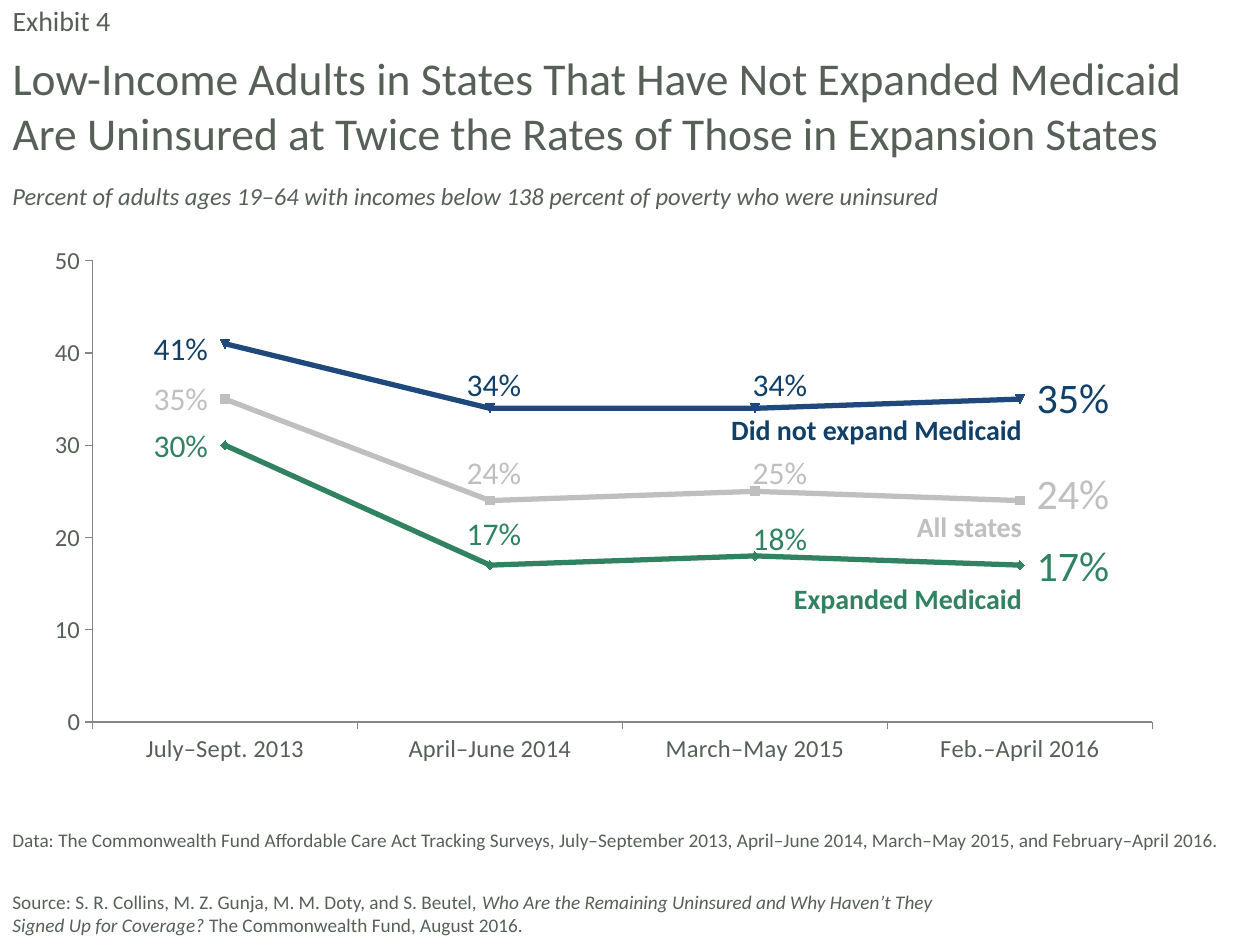
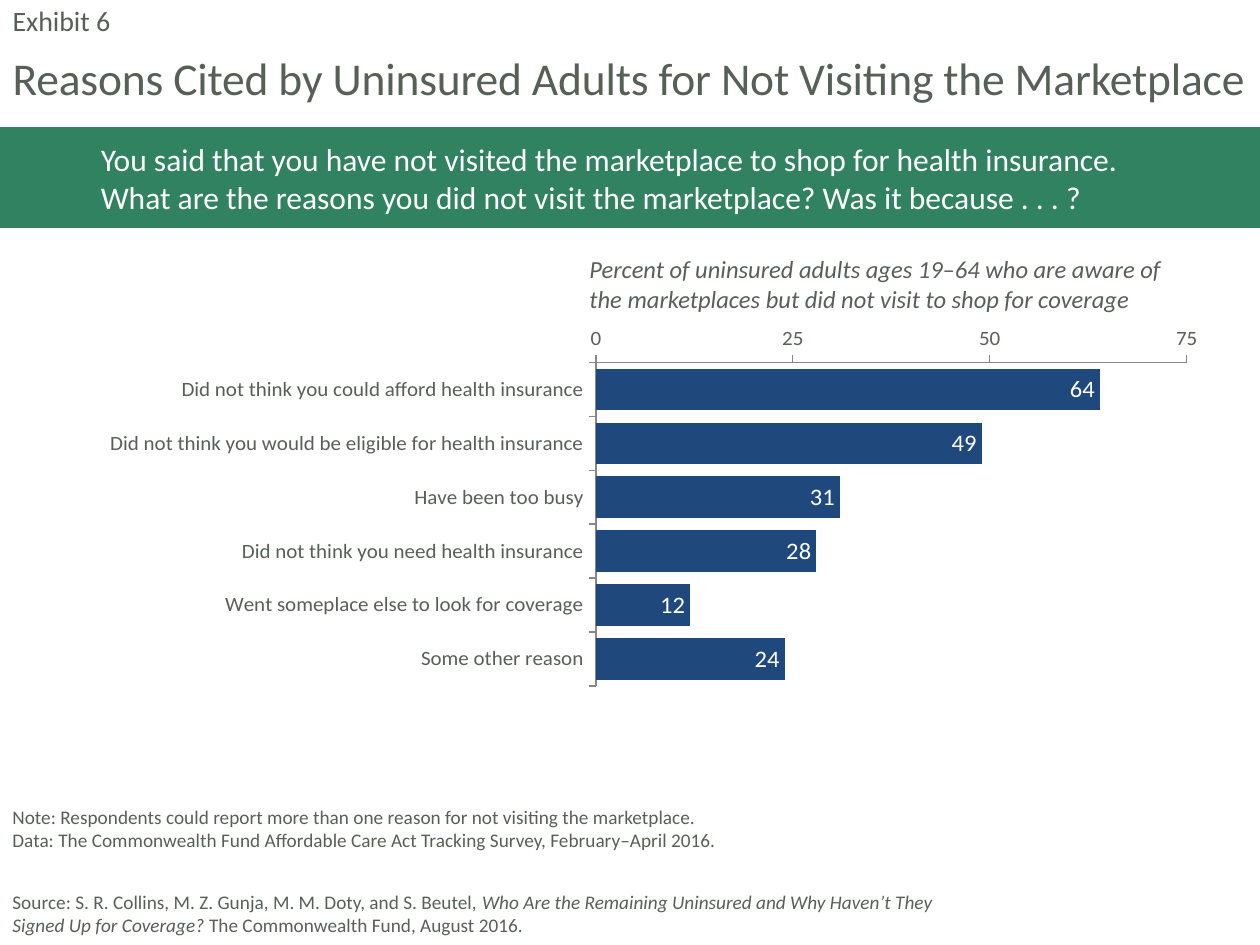
from typing import NamedTuple

from lxml import etree
from pptx import Presentation
from pptx.chart.data import CategoryChartData
from pptx.dml.color import RGBColor
from pptx.enum.chart import XL_CHART_TYPE, XL_LABEL_POSITION, XL_TICK_MARK
from pptx.enum.shapes import MSO_SHAPE
from pptx.enum.text import MSO_ANCHOR, MSO_AUTO_SIZE, PP_ALIGN
from pptx.oxml.ns import qn
from pptx.util import Inches, Pt

LEFT, CENTER, RIGHT = PP_ALIGN.LEFT, PP_ALIGN.CENTER, PP_ALIGN.RIGHT
TOP, MIDDLE, BOTTOM = MSO_ANCHOR.TOP, MSO_ANCHOR.MIDDLE, MSO_ANCHOR.BOTTOM
LINE, BAR = XL_CHART_TYPE.LINE, XL_CHART_TYPE.BAR_CLUSTERED
TICK_OUT, TICK_NONE = XL_TICK_MARK.OUTSIDE, XL_TICK_MARK.NONE
INSIDE_END = XL_LABEL_POSITION.INSIDE_END
RECTANGLE = MSO_SHAPE.RECTANGLE
NO_AUTOFIT = MSO_AUTO_SIZE.NONE

COLUMNS, ROWS = 100, 75
CELL = Inches(10) / COLUMNS
FONT = "Calibri"
SLATE, GREEN, BLUE, NAVY = "566057", "308261", "1F497D", "104068"
SILVER, AXIS_GRAY, WHITE = "BFBFBF", "868686", "FFFFFF"
LABEL_PITCH = Pt(17.2)

SOURCE = [
    ("Source: S. R. Collins, M. Z. Gunja, M. M. Doty, and S. Beutel, ", False),
    ("Who Are the Remaining Uninsured and Why Haven’t They Signed Up for Coverage?", True),
    (" The Commonwealth Fund, August 2016.", False),
]

PERIODS = ["July–Sept. 2013", "April–June 2014", "March–May 2015", "Feb.–April 2016"]
PERIOD_LABELS = [(6.4, RIGHT, 18), (32.3, CENTER, 18), (55, CENTER, 18), (78.6, LEFT, 24)]

REASONS = {
    "Did not think you could afford health insurance": 64,
    "Did not think you would be eligible for health insurance": 49,
    "Have been too busy": 31,
    "Did not think you need health insurance": 28,
    "Went someplace else to look for coverage": 12,
    "Some other reason": 24,
}


class Box(NamedTuple):
    left: float
    top: float
    width: float
    height: float

    def inside(self, left, top, width, height):
        return Box(self.left + left, self.top + top, width, height)

    def emu(self):
        return [round(cells * CELL) for cells in self]


class StateGroup(NamedTuple):
    name: str
    rates: list
    line_color: str
    label_color: str
    label_tops: list
    name_top: float
    name_width: float


STATE_GROUPS = [
    StateGroup("All states", [35, 24, 25, 24], SILVER, SILVER,
               [12.4, 18.3, 18.3, 20.4], 22.4, 12.4),
    StateGroup("Expanded Medicaid", [30, 17, 18, 17], GREEN, GREEN,
               [16.1, 23.1, 23.5, 26.1], 28.1, 23.8),
    StateGroup("Did not expand Medicaid", [41, 34, 34, 35], BLUE, NAVY,
               [8.4, 11.3, 11.3, 12.8], 14.7, 25.4),
]

SLIDE = Box(0, 0, COLUMNS, ROWS)


def rgb(hex_color):
    return RGBColor.from_string(hex_color)


def style_font(font, size, color=SLATE, bold=False, italic=False):
    font.name, font.size = FONT, Pt(size)
    font.bold, font.italic = bold, italic
    font.color.rgb = rgb(color)


def write(frame, lines, size, color=SLATE, align=LEFT, anchor=TOP, pitch=None, **style):
    frame.word_wrap = True
    frame.auto_size = NO_AUTOFIT
    frame.vertical_anchor = anchor
    frame.text = "\n".join(lines)
    for paragraph in frame.paragraphs:
        paragraph.alignment = align
        paragraph.space_before = Pt(0)
        if pitch:
            paragraph.line_spacing = pitch
        for run in paragraph.runs:
            style_font(run.font, size, color, **style)


def add_text(slide, box, *lines, size, **style):
    frame = slide.shapes.add_textbox(*box.emu()).text_frame
    write(frame, lines, size, **style)
    return frame


def place(placeholder, box):
    placeholder.left, placeholder.top, placeholder.width, placeholder.height = box.emu()
    return placeholder.text_frame


def add_header(slide, box, exhibit, title, title_rows, tracking=0):
    title_frame = place(slide.shapes.title, box.inside(0, 3.5, box.width, title_rows))
    write(title_frame, [title], 26)
    title_frame.paragraphs[0].runs[0].font._element.set("spc", str(tracking))

    exhibit_frame = place(slide.placeholders[1], box.inside(0, 0.3, box.width, 3.3))
    exhibit_frame.margin_top = exhibit_frame.margin_bottom = 0
    write(exhibit_frame, [exhibit], 16)
    exhibit_frame.word_wrap = False
    properties = exhibit_frame.paragraphs[0]._p.get_or_add_pPr()
    properties.set("marL", "0")
    properties.set("indent", "0")
    etree.SubElement(properties, qn("a:buNone"))


def add_footer(slide, box, *notes):
    notes_rows = 0.6 + 1.9 * len(notes)
    add_text(slide, box.inside(0, 4.7 - notes_rows, box.width, notes_rows),
             *notes, size=11, anchor=BOTTOM)
    source = add_text(slide, box.inside(0, 6.7, 76.1, 4.7), "", size=11, anchor=BOTTOM)
    for wording, italic in SOURCE:
        run = source.paragraphs[0].add_run()
        run.text = wording
        style_font(run.font, 11, italic=italic)


def set_plot_area(chart, left, top, width, height):
    plot_area = chart._chartSpace.chart.plotArea
    for stale in plot_area.findall(qn("c:layout")):
        plot_area.remove(stale)
    layout = etree.Element(qn("c:layout"))
    manual = etree.SubElement(layout, qn("c:manualLayout"))
    settings = {"layoutTarget": "inner", "xMode": "edge", "yMode": "edge",
                "x": left, "y": top, "w": width, "h": height}
    for tag, value in settings.items():
        etree.SubElement(manual, qn(f"c:{tag}")).set("val", str(value))
    plot_area.insert(0, layout)


def add_plain_chart(slide, box, kind, categories, series, top_value, step, sizes, plot_area):
    data = CategoryChartData(number_format="0")
    data.categories = categories
    for name, values in series:
        data.add_series(name, values)
    chart = slide.shapes.add_chart(kind, *box.emu(), data).chart
    chart.has_legend = chart.has_title = False
    text_size, axis_size = sizes
    style_font(chart.font, text_size)
    for axis in (chart.category_axis, chart.value_axis):
        axis.has_major_gridlines = False
        axis.major_tick_mark, axis.minor_tick_mark = TICK_OUT, TICK_NONE
        axis.format.line.color.rgb = rgb(AXIS_GRAY)
        axis.format.line.width = Pt(0.75)
        style_font(axis.tick_labels.font, axis_size)
    values_axis = chart.value_axis
    values_axis.minimum_scale, values_axis.maximum_scale = 0, top_value
    values_axis.major_unit = step
    values_axis.tick_labels.number_format = "0"
    values_axis.tick_labels.number_format_is_linked = False
    chart.plots[0].vary_by_categories = False
    set_plot_area(chart, *plot_area)
    return chart


def add_rate_trends(slide, box):
    chart = add_plain_chart(
        slide, box, LINE, PERIODS, [(group.name, group.rates) for group in STATE_GROUPS],
        50, 10, (16, 14), (0.05, 0.06, 0.87, 0.82))
    set_plot_area(chart, 0.048, 0.065, 0.869, 0.821)
    for group, trend in zip(STATE_GROUPS, chart.plots[0].series):
        trend.smooth = False
        trend.marker.style = None
        trend.format.line.color.rgb = rgb(group.line_color)
        trend.format.line.width = Pt(3)
        add_text(slide, box.inside(79.4 - group.name_width, group.name_top, group.name_width, 3.4),
                 group.name, size=16, color=group.label_color, align=RIGHT,
                 pitch=LABEL_PITCH, bold=True)
        for rate, top, (left, align, size) in zip(group.rates, group.label_tops, PERIOD_LABELS):
            add_text(slide, box.inside(left, top, 8.4, 3.5), f"{rate}%", size=size,
                     color=group.label_color, align=align, pitch=LABEL_PITCH)


def add_question_band(slide, box, *lines):
    band = slide.shapes.add_shape(RECTANGLE, *box.emu())
    band.shadow.inherit = False
    band.fill.solid()
    band.fill.fore_color.rgb = rgb(GREEN)
    band.line.fill.background()
    band.text_frame.margin_left = round(8 * CELL)
    write(band.text_frame, lines, 18, WHITE, anchor=MIDDLE)


def add_reason_bars(slide, box):
    chart = add_plain_chart(
        slide, box, BAR, list(REASONS), [("Share citing reason", list(REASONS.values()))],
        75, 25, (14, 12), (0.465, 0.056, 0.476, 0.818))
    chart.category_axis.reverse_order = True
    plot = chart.plots[0]
    plot.gap_width = 30
    bars = plot.series[0]
    bars.invert_if_negative = False
    bars.format.fill.solid()
    bars.format.fill.fore_color.rgb = rgb(BLUE)
    plot.has_data_labels = True
    labels = plot.data_labels
    labels.show_value = True
    labels.position = INSIDE_END
    labels.number_format, labels.number_format_is_linked = "0", False
    style_font(labels.font, 14, WHITE)


def build_trend_slide(slide, box):
    add_header(slide, box.inside(0, 0, box.width, 13.3), "Exhibit 4",
               "Low-Income Adults in States That Have Not Expanded Medicaid "
               "Are Uninsured at Twice the Rates of Those in Expansion States", 9.8)
    add_text(slide, box.inside(0, 13.9, 77.6, 3.4),
             "Percent of adults ages 19–64 with incomes below 138 percent of poverty "
             "who were uninsured", size=14, italic=True)
    add_rate_trends(slide, box.inside(2.7, 17.8, 96.8, 44.6))
    add_footer(slide, box.inside(0, 63.4, box.width, 11.4),
               "Data: The Commonwealth Fund Affordable Care Act Tracking Surveys, "
               "July–September 2013, April–June 2014, March–May 2015, and February–April 2016.")


def build_reasons_slide(slide, box):
    add_header(slide, box.inside(0, 0, box.width, 8.9), "Exhibit 6",
               "Reasons Cited by Uninsured Adults for Not Visiting the Marketplace",
               5.4, tracking=-10)
    add_question_band(
        slide, box.inside(0, 10.1, box.width, 8),
        "You said that you have not visited the marketplace to shop for health insurance.",
        "What are the reasons you did not visit the marketplace? Was it because . . . ?")
    add_text(slide, box.inside(45.8, 19.7, 49, 5.7),
             "Percent of uninsured adults ages 19–64 who are aware of "
             "the marketplaces but did not visit to shop for coverage", size=14, italic=True)
    add_reason_bars(slide, box.inside(1.5, 25.9, 98.5, 32.5))
    add_footer(slide, box.inside(0, 63.4, box.width, 11.4),
               "Note: Respondents could report more than one reason for not visiting the marketplace.",
               "Data: The Commonwealth Fund Affordable Care Act Tracking Survey, February–April 2016.")


def main():
    deck = Presentation()
    deck.slide_width, deck.slide_height = round(COLUMNS * CELL), round(ROWS * CELL)
    title_and_body = deck.slide_layouts[1]
    for build in (build_trend_slide, build_reasons_slide):
        build(deck.slides.add_slide(title_and_body), SLIDE)
    deck.save("out.pptx")


if __name__ == "__main__":
    main()
